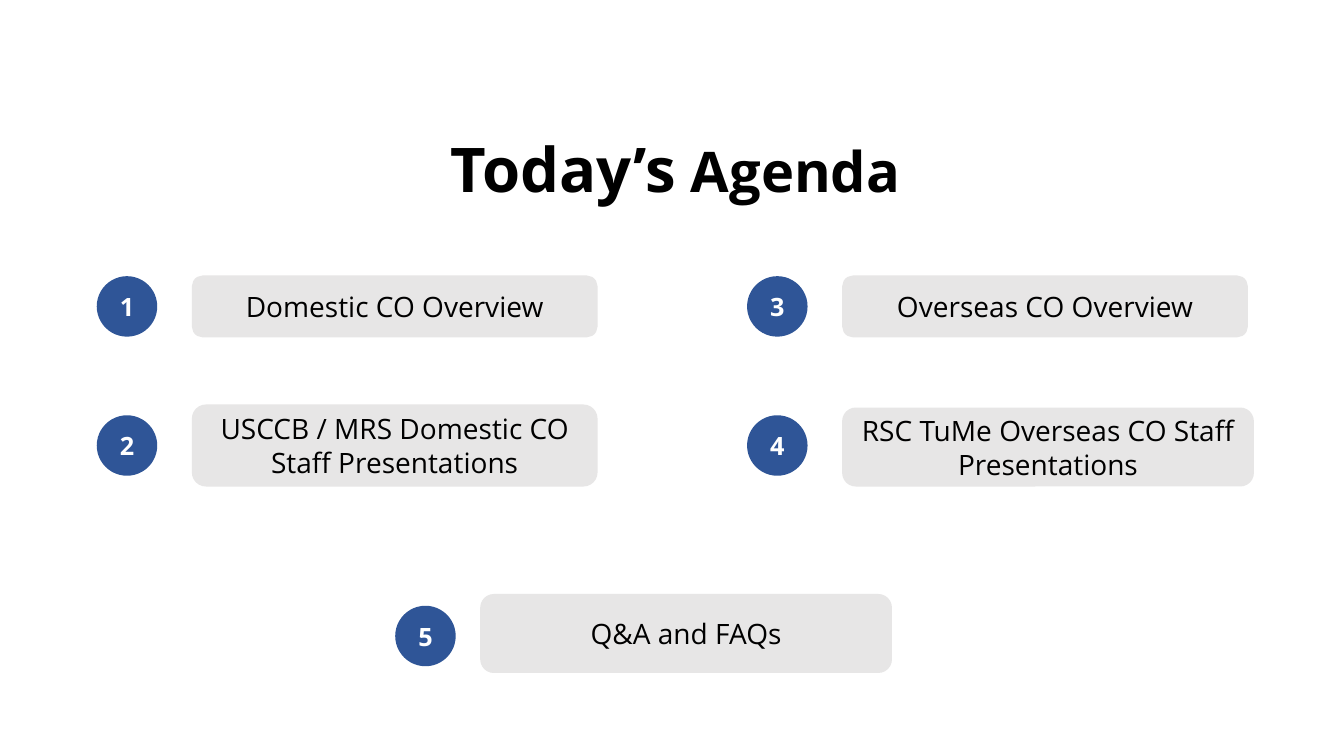
from pptx import Presentation
from pptx.dml.color import RGBColor as Rgb
from pptx.enum.shapes import MSO_SHAPE as Shape
from pptx.enum.text import MSO_ANCHOR as Anchor, MSO_AUTO_SIZE as Fit, PP_ALIGN as Align
from pptx.util import Pt

PX = 9144
FONT = "Open Sans"
COLORS = {"ink": "000000", "blue": "2F5597", "gray": "E7E6E6", "white": "FFFFFF"}
DOT = 60


def px(*sizes):
    return [size * PX for size in sizes]


def tone(name):
    return Rgb.from_string(COLORS[name])


def write(para, text, size=20, color="ink", bold=False, align=Align.CENTER):
    para.alignment = align
    run = para.add_run()
    run.text = text
    font = run.font
    font.name, font.size, font.bold = FONT, Pt(size), bold
    font.color.rgb = tone(color)


class Deck:
    def __init__(self):
        self.show = Presentation()
        self.show.slide_width, self.show.slide_height = px(1333, 750)
        self.slide = self.show.slides.add_slide(self.show.slide_layouts[5])

    def title(self, box, parts):
        head = self.slide.shapes.title
        head.left, head.top, head.width, head.height = px(*box)
        frame = head.text_frame
        frame.auto_size = Fit.NONE
        frame.word_wrap = True
        frame.vertical_anchor = Anchor.MIDDLE
        frame.margin_top = frame.margin_bottom = 0
        for text, size in parts:
            write(frame.paragraphs[0], text, size=size, bold=True, align=Align.LEFT)

    def block(self, kind, box, fill, text, **style):
        shape = self.slide.shapes.add_shape(kind, *px(*box))
        shape.shadow.inherit = False
        shape.fill.solid()
        shape.fill.fore_color.rgb = tone(fill)
        shape.text_frame.word_wrap = True
        shape.text_frame.vertical_anchor = Anchor.MIDDLE
        write(shape.text_frame.paragraphs[0], text, **style)
        return shape

    def dot(self, left, top, text):
        disc = self.block(Shape.OVAL, (left, top, DOT, DOT), "blue", text,
                          size=18, color="white", bold=True)
        disc.line.fill.background()

    def bar(self, box, text):
        pill = self.block(Shape.ROUNDED_RECTANGLE, box, "gray", text)
        pill.line.color.rgb = tone("gray")
        pill.line.width = Pt(1)


def main():
    deck = Deck()
    deck.title((437, 125, 728, 84), [("Today’s", 44), (" Agenda", 40)])
    items = [
        (96, 274, (191, 274, 401, 60), "Domestic CO Overview"),
        (96, 412, (191, 402, 401, 80), "USCCB / MRS Domestic CO Staff Presentations"),
        (741, 274, (836, 274, 401, 60), "Overseas CO Overview"),
        (741, 412, (836, 405, 407, 77), "RSC TuMe Overseas CO Staff Presentations"),
        (392, 601, (477, 590, 407, 77), "Q&A and FAQs"),
    ]
    for num, (left, top, box, text) in enumerate(items, 1):
        deck.dot(left, top, str(num))
        deck.bar(box, text)
    deck.show.save("out.pptx")


if __name__ == "__main__":
    main()
